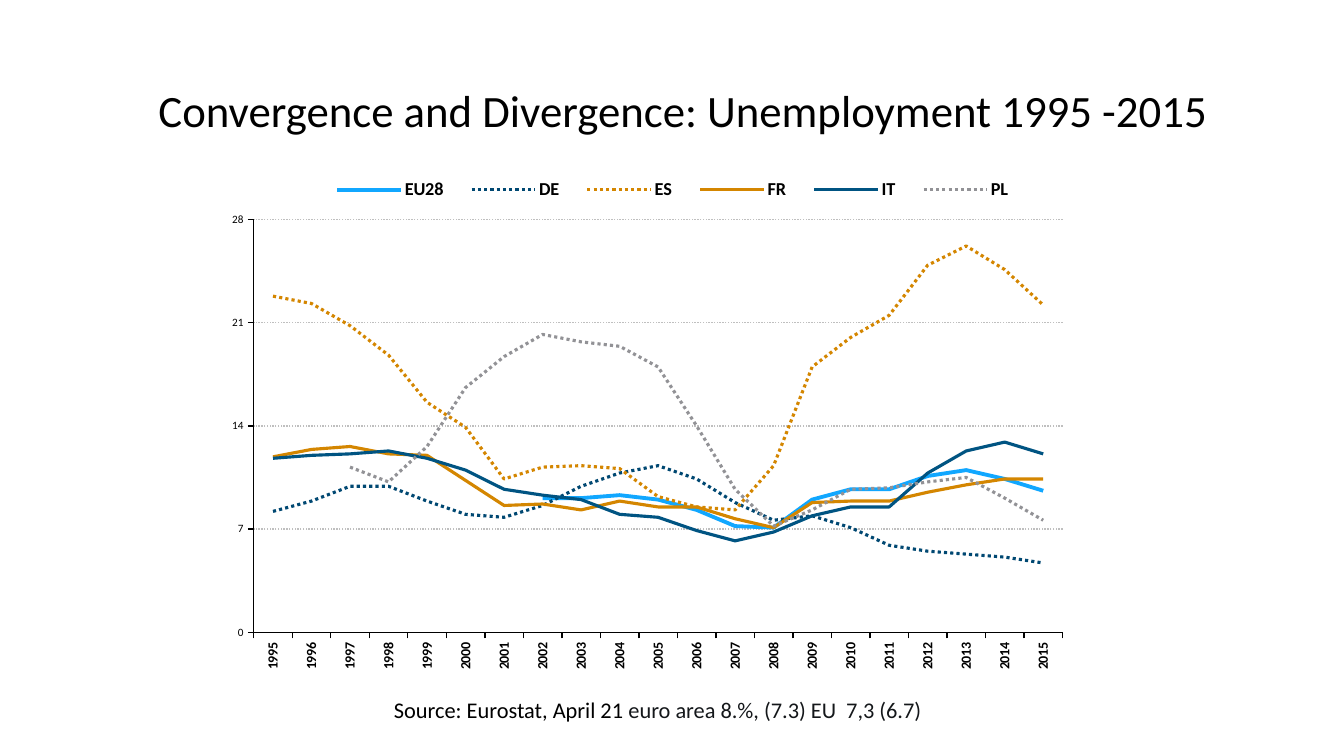
from dataclasses import dataclass

import lxml.etree
import pptx
import pptx.chart.data
import pptx.dml.color
import pptx.enum.chart
import pptx.enum.dml
import pptx.enum.text
import pptx.oxml.ns
import pptx.util
from pptx.util import Cm, Pt

RGBColor = pptx.dml.color.RGBColor
BLACK = RGBColor(0x00, 0x00, 0x00)
INK = RGBColor(0x14, 0x17, 0x1A)
GRID = RGBColor(0xBF, 0xBF, 0xBF)
SKY = RGBColor(0x11, 0xA7, 0xFF)
NAVY = RGBColor(0x00, 0x48, 0x72)
BLUE = RGBColor(0x00, 0x54, 0x82)
OCHRE = RGBColor(0xD4, 0x86, 0x00)
GREY = RGBColor(0x92, 0x92, 0x96)
FONT = "Calibri"
DOTTED = pptx.enum.dml.MSO_LINE.ROUND_DOT
YEARS = range(1995, 2016)


@dataclass
class Country:
    name: str
    color: RGBColor
    rates: list[float]
    dotted: bool = False
    width: float = 2.25


COUNTRIES = [
    Country("EU28", SKY, [9.1, 9.1, 9.3, 9, 8.3, 7.2, 7.1, 9, 9.7, 9.7, 10.6, 11, 10.4, 9.6],
            width=2.75),
    Country("DE", NAVY, [8.2, 8.9, 9.9, 9.9, 8.9, 8, 7.8, 8.6, 9.9, 10.8, 11.3, 10.4, 8.8, 7.6,
                         7.9, 7.1, 5.9, 5.5, 5.3, 5.1, 4.7], dotted=True),
    Country("ES", OCHRE, [22.8, 22.3, 20.8, 18.8, 15.6, 13.9, 10.4, 11.2, 11.3, 11.1, 9.2, 8.5,
                          8.3, 11.3, 18, 20, 21.5, 24.9, 26.2, 24.6, 22.2], dotted=True),
    Country("FR", OCHRE, [11.9, 12.4, 12.6, 12.1, 12, 10.3, 8.6, 8.7, 8.3, 8.9, 8.5, 8.5, 7.7,
                          7.1, 8.8, 8.9, 8.9, 9.5, 10, 10.4, 10.4]),
    Country("IT", BLUE, [11.8, 12, 12.1, 12.3, 11.8, 11, 9.7, 9.3, 9, 8, 7.8, 6.9, 6.2, 6.8,
                         7.9, 8.5, 8.5, 10.8, 12.3, 12.9, 12.1]),
    Country("PL", GREY, [11.2, 10.2, 12.6, 16.6, 18.7, 20.2, 19.7, 19.4, 18, 14, 9.7, 7.2, 8.3,
                         9.7, 9.8, 10.2, 10.5, 9.1, 7.6], dotted=True),
]


def style_font(font, size: float, bold: bool = False, color: RGBColor = BLACK) -> None:
    font.name, font.size, font.bold = FONT, Pt(size), bold
    font.color.rgb = color


def style_line(line, color: RGBColor, width: float, dotted: bool = False) -> None:
    line.color.rgb = color
    line.width = Pt(width)
    if dotted:
        line.dash_style = DOTTED


def set_frame(tf) -> None:
    tf.margin_left = tf.margin_right = tf.margin_top = tf.margin_bottom = Cm(0.13)
    tf.word_wrap = True
    tf.vertical_anchor = pptx.enum.text.MSO_ANCHOR.TOP


def make_layout(x: float, y: float, w: float, h: float, inner: bool = False):
    qn = pptx.oxml.ns.qn
    layout = lxml.etree.Element(qn("c:layout"))
    manual = lxml.etree.SubElement(layout, qn("c:manualLayout"))
    values = {"layoutTarget": "inner"} if inner else {}
    values |= {"xMode": "edge", "yMode": "edge", "x": x, "y": y, "w": w, "h": h}
    for tag, value in values.items():
        lxml.etree.SubElement(manual, qn(f"c:{tag}")).set("val", str(value))
    return layout


def remove_layout(parent) -> None:
    for layout in parent.findall(pptx.oxml.ns.qn("c:layout")):
        parent.remove(layout)


def add_title(slide) -> None:
    sp = slide.shapes.title
    sp.left, sp.top, sp.width, sp.height = Cm(2.69), Cm(1.96), Cm(29.06), Cm(1.63)
    tf = sp.text_frame
    set_frame(tf)
    tf.auto_size = pptx.enum.text.MSO_AUTO_SIZE.NONE
    p = tf.paragraphs[0]
    p.text = "Convergence and Divergence: Unemployment 1995 -2015"
    p.alignment = pptx.enum.text.PP_ALIGN.CENTER
    style_font(p.font, 32)


def add_unemployment_chart(slide) -> None:
    xl = pptx.enum.chart
    data = pptx.chart.data.CategoryChartData(number_format="0.0")
    data.categories = [str(year) for year in YEARS]
    for country in COUNTRIES:
        missing = [None] * (len(YEARS) - len(country.rates))
        data.add_series(country.name, missing + country.rates)
    chart = slide.shapes.add_chart(
        xl.XL_CHART_TYPE.LINE, Cm(5.61), Cm(4.27), Cm(21.21), Cm(12.75), data).chart
    style_font(chart.font, 10)
    chart.has_title = False
    chart.plots[0].vary_by_categories = False
    for series, country in zip(chart.plots[0].series, COUNTRIES):
        series.smooth = False
        style_line(series.format.line, country.color, country.width, country.dotted)

    years, rates = chart.category_axis, chart.value_axis
    for axis in (years, rates):
        axis.major_tick_mark = xl.XL_TICK_MARK.OUTSIDE
        axis.minor_tick_mark = xl.XL_TICK_MARK.NONE
        style_line(axis.format.line, BLACK, 1)
    years.has_major_gridlines = False
    years.tick_label_position = xl.XL_TICK_LABEL_POSITION.LOW
    style_font(years.tick_labels.font, 10, bold=True)
    body = years._element.find(".//" + pptx.oxml.ns.qn("a:bodyPr"))
    body.set("rot", "-5400000")
    body.set("vert", "horz")
    rates.minimum_scale, rates.maximum_scale, rates.major_unit = 0, 28, 7
    rates.has_major_gridlines = True
    style_line(rates.major_gridlines.format.line, GRID, 1, dotted=True)
    style_font(rates.tick_labels.font, 8)
    rates.tick_labels.number_format = "0"
    rates.tick_labels.number_format_is_linked = False

    chart.has_legend = True
    legend = chart.legend
    legend.position = xl.XL_LEGEND_POSITION.TOP
    legend.include_in_layout = True
    style_font(legend.font, 13, bold=True)
    remove_layout(legend._element)
    legend._element.find(pptx.oxml.ns.qn("c:legendPos")).addnext(
        make_layout(0.11, 0.01, 0.85, 0.06))
    plot_area = chart._chartSpace.find(".//" + pptx.oxml.ns.qn("c:plotArea"))
    remove_layout(plot_area)
    plot_area.insert(0, make_layout(0.037, 0.099, 0.961, 0.816, inner=True))


def add_source(slide) -> None:
    tf = slide.shapes.add_textbox(Cm(9.8), Cm(17.4), Cm(14.45), Cm(0.94)).text_frame
    set_frame(tf)
    p = tf.paragraphs[0]
    for text, color in (("Source: Eurostat, April 21 ", BLACK),
                        ("euro area 8.%, (7.3) EU  7,3 (6.7)", INK)):
        r = p.add_run()
        r.text = text
        r.font.color.rgb = color
    p.font.name, p.font.size = FONT, Pt(16)


def main() -> None:
    prs = pptx.Presentation()
    prs.slide_width, prs.slide_height = Cm(33.87), Cm(19.05)
    slide = prs.slides.add_slide(prs.slide_layouts[5])
    add_title(slide)
    add_unemployment_chart(slide)
    add_source(slide)
    prs.save("out.pptx")


if __name__ == "__main__":
    main()
